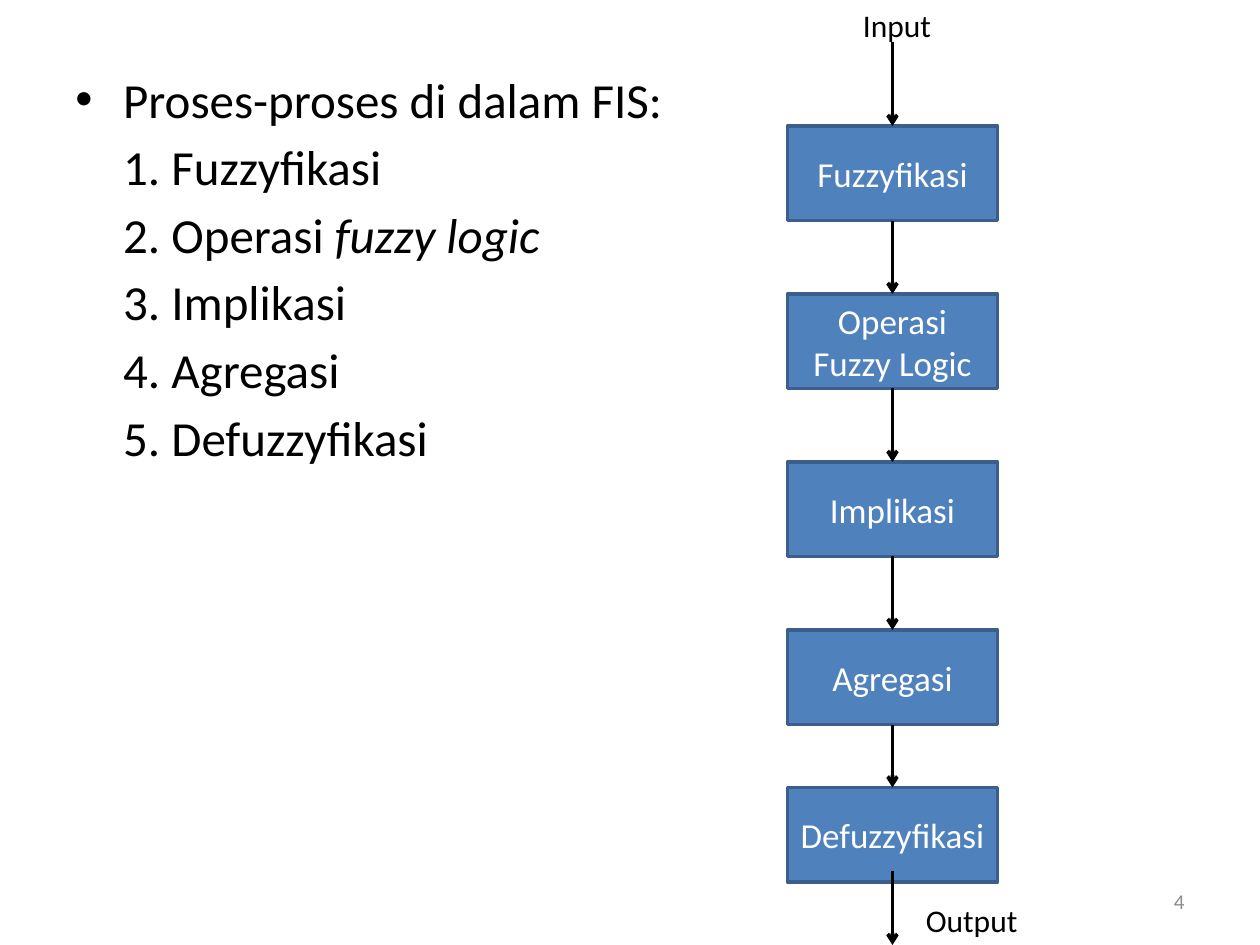
from dataclasses import dataclass
from itertools import pairwise

from lxml.etree import SubElement
from pptx import Presentation
from pptx.dml.color import RGBColor
from pptx.enum.shapes import MSO_CONNECTOR, MSO_SHAPE
from pptx.enum.text import MSO_ANCHOR, PP_ALIGN
from pptx.oxml.ns import qn
from pptx.util import Inches, Pt


@dataclass(frozen=True)
class Theme:
    face: str = "Calibri"
    ink: str = "000000"
    pale: str = "FFFFFF"
    grey: str = "8C8C8C"
    fill: str = "4F81BD"
    edge: str = "3A5F8C"
    body: int = 28
    step: int = 20
    label: int = 18
    note: int = 12
    line: int = 2
    gap: int = 5


class Sheet:
    """Places elements on a grid of twelve cells to the inch."""

    def __init__(self, slide, theme):
        self.slide, self.theme = slide, theme

    def grid(self, *cells):
        return [Inches(cell / 12) for cell in cells]

    def style(self, para, size, color, align=PP_ALIGN.LEFT):
        para.alignment = align
        para.font.name = self.theme.face
        para.font.size = Pt(size)
        para.font.color.rgb = RGBColor.from_string(color)

    def text(self, words, area, size, color=None, align=PP_ALIGN.LEFT,
             anchor=MSO_ANCHOR.TOP, wrap=True):
        frame = self.slide.shapes.add_textbox(*self.grid(*area)).text_frame
        frame.word_wrap = wrap
        frame.vertical_anchor = anchor
        frame.text = words
        self.style(frame.paragraphs[0], size, color or self.theme.ink, align)
        return frame

    def bullets(self, head, items, area):
        """Adds a bulleted heading with items lined up under its text.

        Each item is a pair of plain and italic words.
        """
        frame = self.text(head, area, self.theme.body)
        for plain, slant in items:
            para = frame.add_paragraph()
            self.style(para, self.theme.body, self.theme.ink)
            para.add_run().text = plain
            if slant:
                run = para.add_run()
                run.text = slant
                run.font.italic = True
        indent = Inches(0.38)
        for para in frame.paragraphs:
            para.space_before = Pt(self.theme.gap)
            para._p.get_or_add_pPr().set("marL", str(indent))
        props = frame.paragraphs[0]._p.get_or_add_pPr()
        props.set("indent", str(-indent))
        SubElement(props, qn("a:buFont"), typeface="Arial")
        SubElement(props, qn("a:buChar"), char="•")

    def box(self, words, area):
        box = self.slide.shapes.add_shape(MSO_SHAPE.RECTANGLE, *self.grid(*area))
        box.shadow.inherit = False
        box.fill.solid()
        box.fill.fore_color.rgb = RGBColor.from_string(self.theme.fill)
        box.line.color.rgb = RGBColor.from_string(self.theme.edge)
        box.line.width = Pt(self.theme.line)
        frame = box.text_frame
        frame.word_wrap = True
        frame.vertical_anchor = MSO_ANCHOR.MIDDLE
        frame.text = words
        self.style(frame.paragraphs[0], self.theme.step, self.theme.pale,
                   PP_ALIGN.CENTER)
        return box

    def arrow(self, col, top, end, above=None, below=None):
        """Draws a downward arrow, joined to the boxes given."""
        line = self.slide.shapes.add_connector(
            MSO_CONNECTOR.STRAIGHT, *self.grid(col, top, col, end))
        if above:
            line.begin_connect(above, 2)
        if below:
            line.end_connect(below, 0)
        line.line.color.rgb = RGBColor.from_string(self.theme.ink)
        line.line.width = Pt(self.theme.line)
        SubElement(line.line._get_or_add_ln(), qn("a:tailEnd"), type="arrow")
        SubElement(line._element.spPr, qn("a:effectLst"))


def main():
    deck = Presentation()
    deck.slide_width, deck.slide_height = Inches(10), Inches(7.5)
    theme = Theme()
    sheet = Sheet(deck.slides.add_slide(deck.slide_layouts[6]), theme)

    sheet.bullets("Proses-proses di dalam FIS:", [
        ("1. Fuzzyfikasi", ""),
        ("2. Operasi ", "fuzzy logic"),
        ("3. Implikasi", ""),
        ("4. Agregasi", ""),
        ("5. Defuzzyfikasi", ""),
    ], (6, 6, 66, 74))
    sheet.text("4", (86, 83.4, 28, 4.8), theme.note, theme.grey,
               PP_ALIGN.RIGHT, MSO_ANCHOR.MIDDLE)

    left, wide, high = 75, 20, 9
    mid = left + wide / 2
    steps = {"Fuzzyfikasi": 12, "Operasi Fuzzy Logic": 28, "Implikasi": 44,
             "Agregasi": 60, "Defuzzyfikasi": 75}
    flow = [(sheet.box(name, (left, row, wide, high)), row)
            for name, row in steps.items()]
    first, row = flow[0]
    sheet.arrow(mid, 4, row, below=first)
    for (above, top), (below, end) in pairwise(flow):
        sheet.arrow(mid, top + high, end, above, below)
    sheet.arrow(mid, 83, 90)

    sheet.text("Input", (81, 0, 9, 4.8), theme.label, wrap=False)
    sheet.text("Output", (87, 85.2, 11.3, 4.8), theme.label, wrap=False)
    deck.save("out.pptx")


if __name__ == "__main__":
    main()
